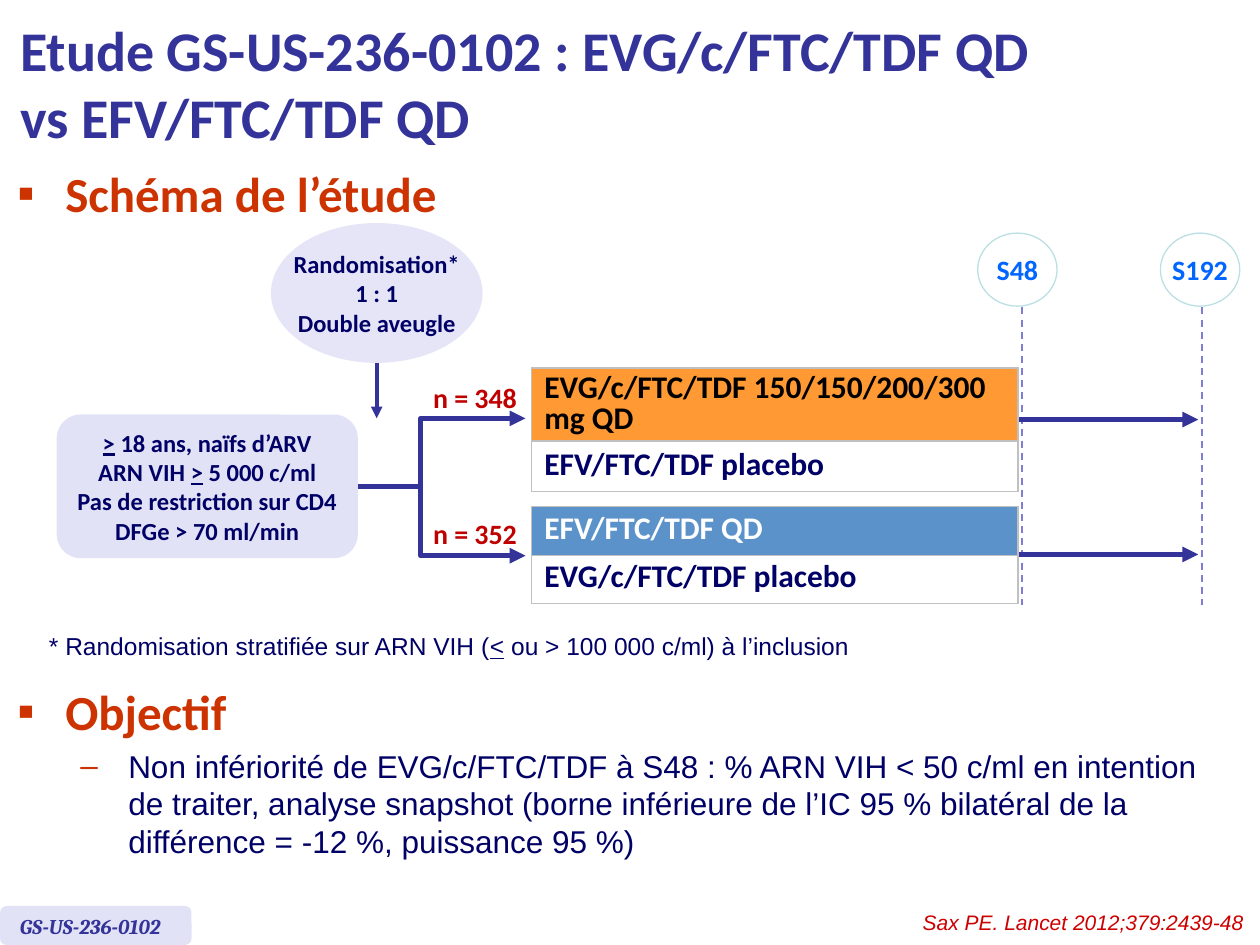
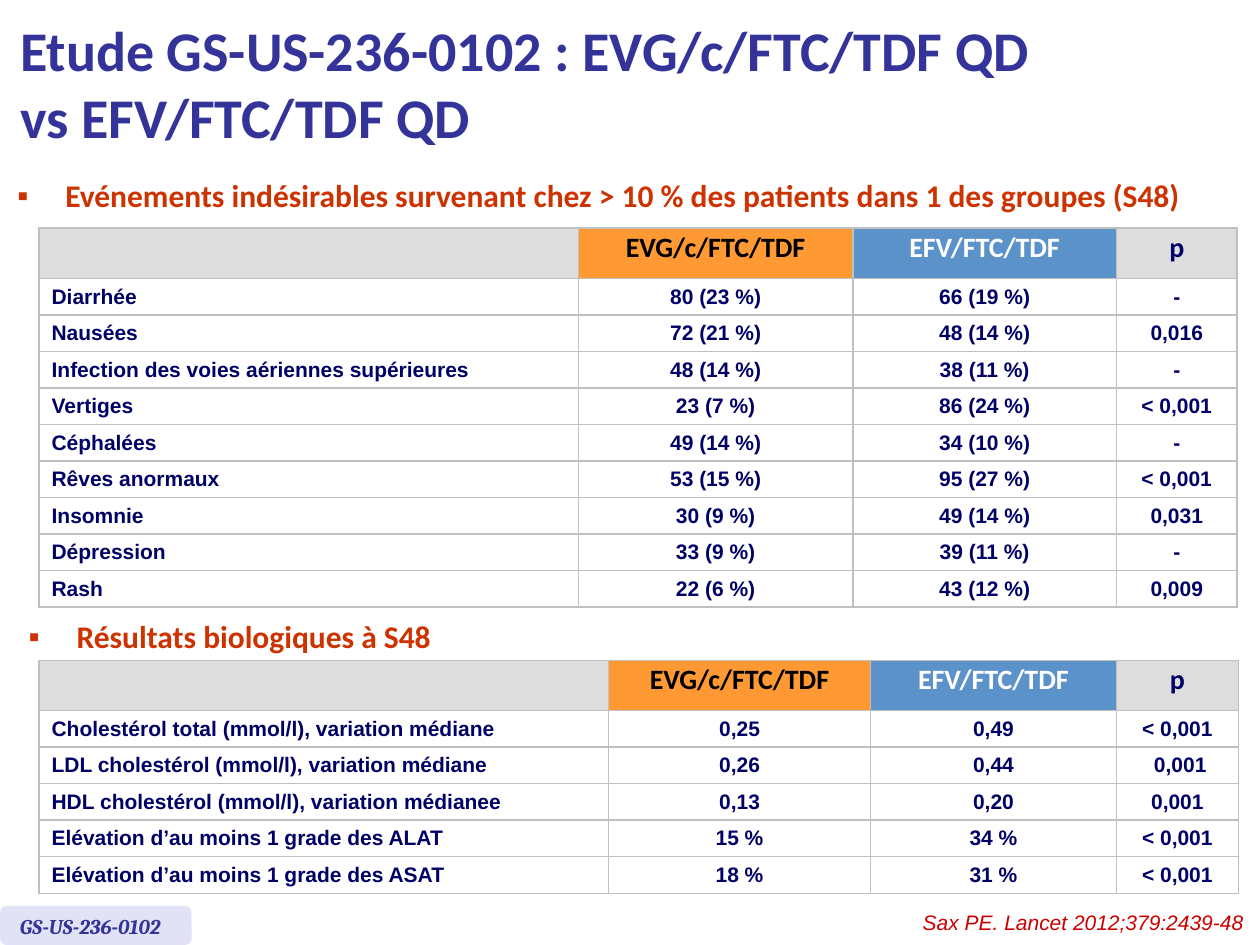
import dataclasses
import pptx
import pptx.chart
import pptx.dml.color
import pptx.enum.dml
import pptx.enum.shapes
import pptx.enum.text
import pptx.oxml
import pptx.oxml.ns
import pptx.util
from lxml import etree

Inches = pptx.util.Inches
Pt = pptx.util.Pt
ALIGN = pptx.enum.text.PP_ALIGN
ANCHOR = pptx.enum.text.MSO_ANCHOR
SHAPE = pptx.enum.shapes.MSO_SHAPE


def type_style(name, size, color, **extra):
    return {"name": name, "size": Pt(size), "color": color, **extra}


@dataclasses.dataclass(frozen=True)
class Theme:
    """Colours and type sizes shared by the slides."""
    indigo = "333399"
    navy = "000066"
    rust = "CC3300"
    lavender = "E2E2F6"
    mist = "E5E5F7"
    guide = "7E7ED4"
    aqua = "BBE0E3"
    white = "FFFFFF"
    orange = "FF9933"
    blue = "5B92C9"
    header_grey = "DDDDDD"
    border_grey = "C0C0C0"

    title = type_style("Calibri", 32, indigo, bold=True)
    heading = type_style("Calibri", 28, rust, bold=True)
    subheading = type_style("Calibri", 18, rust, bold=True)
    body = type_style("Arial", 18, navy)
    note = type_style("Arial", 14, navy)
    label = type_style("Calibri", 14, navy, bold=True)
    count = type_style("Calibri", 16, "C00000", bold=True)
    week = type_style("Calibri", 16, "0066FF", bold=True)
    arm = type_style("Calibri", 18, navy, bold=True)
    column_head = type_style("Calibri", 16, navy, bold=True)
    value = type_style("Arial", 12, navy, bold=True)
    study = type_style("Cambria", 12, indigo, bold=True, italic=True)
    citation = type_style("Arial", 12, "CC0000", italic=True)


THEME = Theme()


@dataclasses.dataclass
class Box:
    """A rectangle in inches."""
    left: float
    top: float
    width: float
    height: float

    def point(self, x, y):
        return Inches(self.left + x), Inches(self.top + y)

    def inner(self, x, y, width, height):
        return Box(self.left + x, self.top + y, width, height)

    def emu(self):
        return [Inches(length) for length in dataclasses.astuple(self)]


@dataclasses.dataclass
class Cell:
    text: str
    style: dict
    fill: str = THEME.white
    align: int = ALIGN.LEFT


# Formatting helpers
def rgb(color):
    return pptx.dml.color.RGBColor.from_string(color)


def set_values(target, **values):
    for name, value in values.items():
        setattr(target, name, value)


def format_font(font, style, **extra):
    for name, value in {**style, **extra}.items():
        if name == "color":
            font.color.rgb = rgb(value)
        else:
            setattr(font, name, value)


def fill_para(para, text, style, **values):
    """Write one paragraph; parts between underscores are underlined."""
    set_values(para, **values)
    for index, part in enumerate(text.split("_")):
        if part or "_" not in text:
            span = para.add_run()
            span.text = part
            format_font(span.font, style, underline=index % 2 == 1)


def fill_frame(frame, lines, style, align=ALIGN.LEFT, anchor=ANCHOR.TOP, wrap=True):
    set_values(frame, word_wrap=wrap, vertical_anchor=anchor)
    for index, line in enumerate(lines):
        para = frame.add_paragraph() if index else frame.paragraphs[0]
        fill_para(para, line, style, alignment=align)


def add_bullet(para, character, margin):
    properties = para._p.get_or_add_pPr()
    properties.set("marL", str(Inches(margin)))
    properties.set("indent", str(Inches(-0.38)))
    color = etree.SubElement(properties, pptx.oxml.ns.qn("a:buClr"))
    etree.SubElement(color, pptx.oxml.ns.qn("a:srgbClr"), val=THEME.rust)
    etree.SubElement(properties, pptx.oxml.ns.qn("a:buFont"), typeface="Arial")
    etree.SubElement(properties, pptx.oxml.ns.qn("a:buChar"), char=character)


# Drawing helpers
def add_text(page, box, lines, style, **layout):
    text_box = page.shapes.add_textbox(*box.emu())
    fill_frame(text_box.text_frame, lines, style, **layout)


def add_heading(page, box, text, style):
    frame = page.shapes.add_textbox(*box.emu()).text_frame
    frame.word_wrap = True
    add_bullet(frame.paragraphs[0], "▪", 0.38)
    fill_para(frame.paragraphs[0], text, style)
    return frame


def add_shape(page, kind, box, fill, lines=(), style=None, outline=None):
    shape = page.shapes.add_shape(kind, *box.emu())
    shape.shadow.inherit = False
    shape.fill.solid()
    shape.fill.fore_color.rgb = rgb(fill)
    if outline:
        set_values(shape.line, width=Pt(0.75))
        shape.line.color.rgb = rgb(outline)
    else:
        shape.line.fill.background()
    fill_frame(shape.text_frame, lines, style, ALIGN.CENTER, ANCHOR.MIDDLE, False)
    return shape


def style_line(shape, width, color=THEME.indigo, arrows=()):
    shape.line.width = Pt(width)
    shape.line.color.rgb = rgb(color)
    for end in arrows:
        etree.SubElement(shape.line._get_or_add_ln(), pptx.oxml.ns.qn(f"a:{end}"),
                         type="triangle")


def add_line(page, start, end, width, **look):
    straight = pptx.enum.shapes.MSO_CONNECTOR.STRAIGHT
    line = page.shapes.add_connector(straight, *start, *end)
    style_line(line, width, **look)
    etree.SubElement(line._element.spPr, pptx.oxml.ns.qn("a:effectLst"))
    return line


def add_borders(cell):
    properties = cell._tc.get_or_add_tcPr()
    for side in ("lnL", "lnR", "lnT", "lnB"):
        border = etree.SubElement(properties, pptx.oxml.ns.qn(f"a:{side}"), w=str(Pt(1)))
        solid = etree.SubElement(border, pptx.oxml.ns.qn("a:solidFill"))
        etree.SubElement(solid, pptx.oxml.ns.qn("a:srgbClr"), val=THEME.border_grey)


def add_grid(page, box, widths, heights, rows, line_spacing):
    frame = page.shapes.add_table(len(rows), len(widths), *box.emu())
    table = frame.table
    set_values(table, first_row=False, horz_banding=False)
    for column, width in zip(table.columns, widths):
        column.width = Inches(width)
    for row, height, contents in zip(table.rows, heights, rows):
        row.height = Inches(height)
        for cell, content in zip(row.cells, contents):
            add_borders(cell)
            cell.fill.solid()
            cell.fill.fore_color.rgb = rgb(content.fill)
            cell.vertical_anchor = ANCHOR.MIDDLE
            fill_para(cell.text_frame.paragraphs[0], content.text, content.style,
                      alignment=content.align, line_spacing=line_spacing)


# Title and footer common to every slide
def add_page(deck):
    page = deck.slides.add_slide(deck.slide_layouts[5])
    title = page.shapes.title
    left, top, width, height = Box(0.06, 0.05, 9.55, 1.21).emu()
    set_values(title, left=left, top=top, width=width, height=height)
    frame = title.text_frame
    frame.text = "Etude GS-US-236-0102 : EVG/c/FTC/TDF QD\vvs EFV/FTC/TDF QD"
    set_values(frame, auto_size=pptx.enum.text.MSO_AUTO_SIZE.NONE, word_wrap=True,
               vertical_anchor=ANCHOR.MIDDLE)
    frame.paragraphs[0].alignment = ALIGN.LEFT
    for span in frame.paragraphs[0].runs:
        format_font(span.font, THEME.title)
    add_footer(page, Box(0, 7.17, 10, 0.33))
    return page


def add_footer(page, box):
    add_shape(page, SHAPE.ROUNDED_RECTANGLE, box.inner(0, 0.02, 1.52, 0.31), THEME.lavender)
    add_text(page, box.inner(0.06, 0.03, 1.41, 0.3), ["GS-US-236-0102"], THEME.study)
    add_text(page, box.inner(6.97, 0, 3, 0.3), ["Sax PE. Lancet 2012;379:2439-48"],
             THEME.citation, align=ALIGN.RIGHT)


# Study design diagram
def add_enrolment(page, box):
    add_shape(page, SHAPE.OVAL, box.inner(1.7, 0, 1.68, 1.11), THEME.mist,
              ["Randomisation*", "1 : 1", "Double aveugle"], THEME.label)
    add_line(page, box.point(2.54, 1.11), box.point(2.54, 1.55), 2.25, arrows=["tailEnd"])
    criteria = add_shape(
        page, SHAPE.ROUNDED_RECTANGLE, box.inner(0, 1.52, 2.39, 1.14), THEME.lavender,
        ["_>_ 18 ans, naïfs d’ARV", "ARN VIH _>_ 5 000 c/ml",
         "Pas de restriction sur CD4", "DFGe > 70 ml/min"], THEME.label)
    stem = add_line(page, box.point(2.39, 2.09), box.point(2.87, 2.09), 3)
    stem.begin_connect(criteria, 3)

    # Two-way split towards the arms
    builder = page.shapes.build_freeform(*box.point(3.72, 1.55))
    corners = [(2.89, 1.55), (2.89, 2.64), (3.72, 2.64)]
    builder.add_line_segments([box.point(*corner) for corner in corners], close=False)
    split = builder.convert_to_shape()
    split.shadow.inherit = False
    split.fill.background()
    style_line(split, 3, arrows=["headEnd", "tailEnd"])
    for text, top in (("n = 348", 1.2), ("n = 352", 2.28)):
        add_text(page, box.inner(2.87, top, 0.9, 0.37), [text], THEME.count,
                 align=ALIGN.CENTER, wrap=False)


def add_arms(page, box):
    arms = [
        (0, (0.57, 0.4), 0.8, "EVG/c/FTC/TDF 150/150/200/300 mg QD", "000000",
         THEME.orange, "EFV/FTC/TDF placebo"),
        (1.1, (0.39, 0.38), 0.7, "EFV/FTC/TDF QD", THEME.white,
         THEME.blue, "EVG/c/FTC/TDF placebo"),
    ]
    for top, heights, spacing, drug, color, fill, placebo in arms:
        rows = [[Cell(drug, {**THEME.arm, "color": color}, fill)],
                [Cell(placebo, THEME.arm)]]
        add_grid(page, box.inner(0, top, 3.86, sum(heights)), [3.86], heights, rows, spacing)


def add_timeline(page, box):
    for text, left, guide in (("S48", 0, 0.35), ("S192", 1.45, 1.78)):
        add_shape(page, SHAPE.OVAL, box.inner(left, 0, 0.63, 0.58), THEME.white,
                  [text], THEME.week, THEME.aqua)
        line = add_line(page, box.point(guide, 0.59), box.point(guide, 2.95), 1,
                        color=THEME.guide)
        line.line.dash_style = pptx.enum.dml.MSO_LINE.DASH
    for y in (1.48, 2.55):
        add_line(page, box.point(0.33, y), box.point(1.75, y), 3, arrows=["tailEnd"])


def build_design_slide(deck):
    page = add_page(deck)
    add_heading(page, Box(0.04, 1.25, 3.8, 0.63), "Schéma de l’étude", THEME.heading)
    add_enrolment(page, Box(0.45, 1.77, 3.77, 2.67))
    add_arms(page, Box(4.22, 2.92, 3.86, 1.87))
    add_timeline(page, Box(7.76, 1.85, 2.08, 2.95))
    add_text(page, Box(0.29, 4.96, 8.1, 0.34),
             ["* Randomisation stratifiée sur ARN VIH (_<_ ou > 100 000 c/ml) à l’inclusion"],
             THEME.note)
    objective = add_heading(page, Box(0.04, 5.36, 9.8, 1.55), "Objectif", THEME.heading)
    detail = objective.add_paragraph()
    add_bullet(detail, "–", 0.88)
    fill_para(detail, "Non infériorité de EVG/c/FTC/TDF à S48 : % ARN VIH < 50 c/ml en "
              "intention de traiter, analyse snapshot (borne inférieure de l’IC 95 % "
              "bilatéral de la différence = -12 %, puissance 95 %)",
              THEME.body, space_before=Pt(3.6))


# Result tables
def add_results(page, box, widths, header_height, records):
    heads = [("", THEME.navy, THEME.header_grey), ("EVG/c/FTC/TDF", "000000", THEME.orange),
             ("EFV/FTC/TDF", THEME.white, THEME.blue), ("p", THEME.navy, THEME.header_grey)]
    rows = [[Cell(text, {**THEME.column_head, "color": color}, fill, ALIGN.CENTER)
             for text, color, fill in heads]]
    for name, *values in records:
        rows.append([Cell(name, THEME.value)]
                    + [Cell(value, THEME.value, align=ALIGN.CENTER) for value in values])
    heights = [header_height] + [0.29] * len(records)
    add_grid(page, box, widths, heights, rows, Pt(13.5))


def build_results_slide(deck):
    page = add_page(deck)
    add_heading(page, Box(0.04, 1.35, 9.96, 0.51),
                "Evénements indésirables survenant chez > 10 % des patients "
                "dans 1 des groupes (S48)", THEME.subheading)
    add_results(page, Box(0.31, 1.81, 9.51, 2.94), (4.28, 2.18, 2.09, 0.96), 0.33, [
        ("Diarrhée", "80 (23 %)", "66 (19 %)", "-"),
        ("Nausées", "72 (21 %)", "48 (14 %)", "0,016"),
        ("Infection des voies aériennes supérieures", "48 (14 %)", "38 (11 %)", "-"),
        ("Vertiges", "23 (7 %)", "86 (24 %)", "< 0,001"),
        ("Céphalées", "49 (14 %)", "34 (10 %)", "-"),
        ("Rêves anormaux", "53 (15 %)", "95 (27 %)", "< 0,001"),
        ("Insomnie", "30 (9 %)", "49 (14 %)", "0,031"),
        ("Dépression", "33 (9 %)", "39 (11 %)", "-"),
        ("Rash", "22 (6 %)", "43 (12 %)", "0,009"),
    ])
    add_heading(page, Box(0.13, 4.85, 9.87, 0.51), "Résultats biologiques à S48",
                THEME.subheading)
    add_results(page, Box(0.31, 5.24, 9.52, 1.8), (4.52, 2.08, 1.95, 0.97), 0.35, [
        ("Cholestérol total (mmol/l), variation médiane", "0,25", "0,49", "< 0,001"),
        ("LDL cholestérol (mmol/l), variation médiane", "0,26", "0,44", " 0,001"),
        ("HDL cholestérol (mmol/l), variation médianee", "0,13", "0,20", "0,001"),
        ("Elévation d’au moins 1 grade des ALAT", "15 %", "34 %", "< 0,001"),
        ("Elévation d’au moins 1 grade des ASAT", "18 %", "31 %", "< 0,001"),
    ])


def main():
    deck = pptx.Presentation()
    set_values(deck, slide_width=Inches(10), slide_height=Inches(7.5))
    build_design_slide(deck)
    build_results_slide(deck)
    deck.save("out.pptx")


if __name__ == "__main__":
    main()
